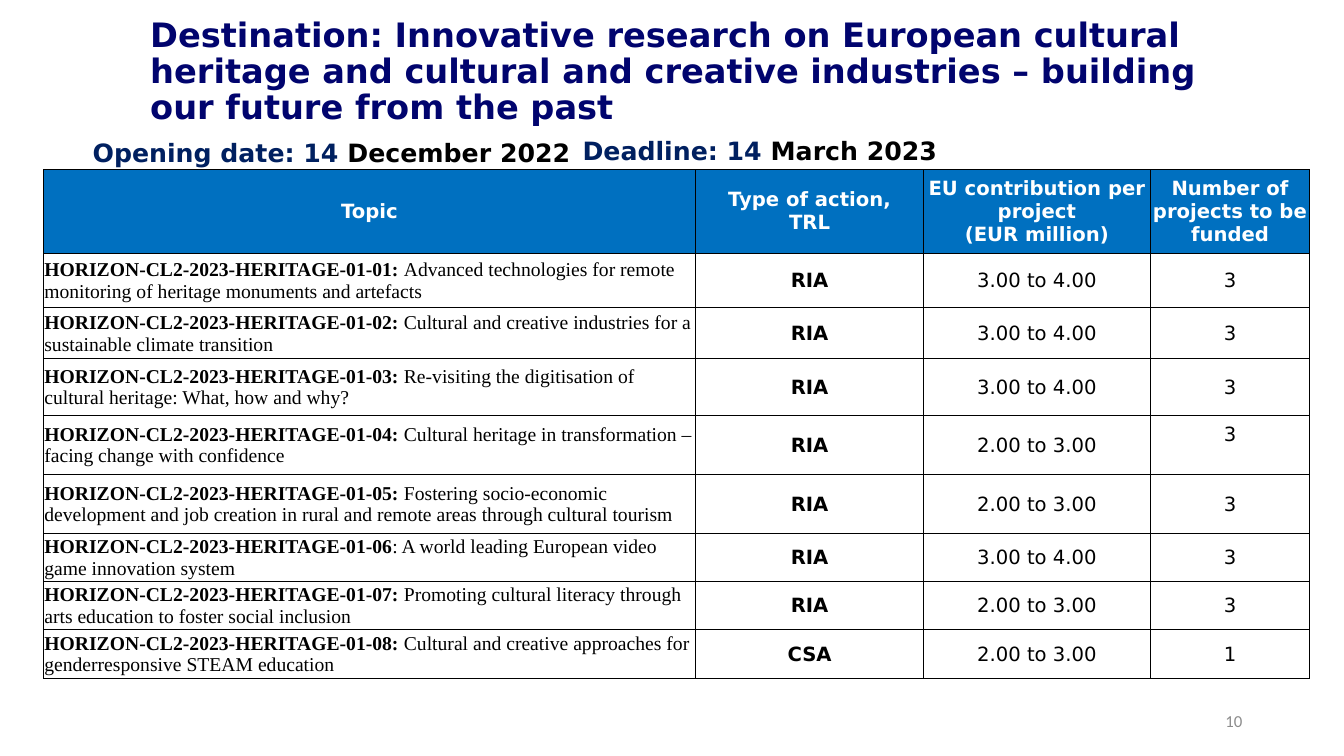
from dataclasses import dataclass

from lxml.etree import SubElement
from pptx import Presentation
from pptx.dml.color import RGBColor
from pptx.enum.text import MSO_ANCHOR, MSO_AUTO_SIZE, PP_ALIGN
from pptx.oxml.ns import qn
from pptx.util import Emu, Pt

EMU_PER_PX = 9144  # 100 px to the inch


@dataclass(frozen=True)
class Theme:
    sans: str = "DejaVu Sans"
    serif: str = "Times New Roman"
    number_font: str = "Calibri"
    title: str = "01046E"
    date: str = "002060"
    header: str = "0070C0"
    white: str = "FFFFFF"
    black: str = "000000"
    grey: str = "8C8C8C"
    title_size: int = 24
    date_size: int = 18
    table_size: int = 14
    number_size: int = 12
    border: float = 0.5


THEME = Theme()
COLUMN_WIDTHS = (647, 226, 225, 158)
ROW_HEIGHTS = (83, 54, 51, 56, 59, 58, 44, 48, 48)
HEADERS = (
    "Topic",
    "Type of action,\nTRL",
    "EU contribution per project\n(EUR million)",
    "Number of projects to be funded",
)
LOW, HIGH = "2.00 to 3.00", "3.00 to 4.00"
# Code, separator, topic, type of action, contribution, number of projects
TOPICS = (
    ("01", ": ", "Advanced technologies for remote\nmonitoring of heritage monuments and artefacts", "RIA", HIGH, "3"),
    ("02", ": ", "Cultural and creative industries for a sustainable climate transition", "RIA", HIGH, "3"),
    ("03", ": ", "Re-visiting the digitisation of cultural heritage: What, how and why?", "RIA", HIGH, "3"),
    ("04", ": ", "Cultural heritage in transformation – facing change with confidence", "RIA", LOW, "3"),
    ("05", ": ", "Fostering socio-economic development and job creation in rural and remote areas "
     "through cultural tourism", "RIA", LOW, "3"),
    ("06", "", ": A world leading European video game innovation system", "RIA", HIGH, "3"),
    ("07", ": ", "Promoting cultural literacy through arts education to foster social inclusion", "RIA", LOW, "3"),
    ("08", ": ", "Cultural and creative approaches for genderresponsive STEAM education", "CSA", LOW, "1"),
)
RAISED_COUNT_ROW = 4


def px(length):
    return Emu(length * EMU_PER_PX)


def style_font(font, name, size, color, bold=False):
    font.name = name
    font.size = Pt(size)
    font.bold = bold
    font.color.rgb = RGBColor.from_string(color)


def style_text(frame, name, size, color, bold=False, align=PP_ALIGN.LEFT):
    for para in frame.paragraphs:
        para.alignment = align
        for span in para.runs:
            style_font(span.font, name, size, color, bold)


def add_title(page, text, left, top, width, height):
    box = page.shapes.title
    box.left, box.top, box.width, box.height = map(px, (left, top, width, height))
    frame = box.text_frame
    frame.text = text
    frame.word_wrap = True
    frame.auto_size = MSO_AUTO_SIZE.NONE
    frame.vertical_anchor = MSO_ANCHOR.TOP
    frame.paragraphs[0].line_spacing = 0.9
    style_text(frame, THEME.sans, THEME.title_size, THEME.title, bold=True)


def add_text_box(page, text, left, top, width, height):
    box = page.shapes.add_textbox(*map(px, (left, top, width, height)))
    box.text_frame.word_wrap = True
    box.text_frame.text = text
    return box.text_frame


def add_date(page, label, date, left, top, width):
    frame = add_text_box(page, label, left, top, width, 40)
    frame.paragraphs[0].add_run().text = date
    style_text(frame, THEME.sans, THEME.date_size, THEME.date, bold=True)
    frame.paragraphs[0].runs[1].font.color.rgb = RGBColor.from_string(THEME.black)


def add_page_number(page, number):
    frame = add_text_box(page, number, 942, 695, 300, 40)
    frame.vertical_anchor = MSO_ANCHOR.MIDDLE
    style_text(frame, THEME.number_font, THEME.number_size, THEME.grey, align=PP_ALIGN.RIGHT)


def draw_borders(cell):
    properties = cell._tc.get_or_add_tcPr()
    for side in ("a:lnL", "a:lnR", "a:lnT", "a:lnB"):
        line = SubElement(properties, qn(side), w=str(Pt(THEME.border)))
        fill = SubElement(line, qn("a:solidFill"))
        SubElement(fill, qn("a:srgbClr"), val=THEME.black)


def prepare_cell(cell, fill):
    """Set borders, fill, insets and anchor; borders must precede the fill in the XML."""
    draw_borders(cell)
    cell.fill.solid()
    cell.fill.fore_color.rgb = RGBColor.from_string(fill)
    cell.margin_left = cell.margin_right = cell.margin_top = px(1)
    cell.margin_bottom = 0
    cell.vertical_anchor = MSO_ANCHOR.MIDDLE


def fill_cell(cell, text, fill=THEME.white, color=THEME.black, bold=False):
    prepare_cell(cell, fill)
    cell.text_frame.text = text
    style_text(cell.text_frame, THEME.sans, THEME.table_size, color, bold, PP_ALIGN.CENTER)


def fill_topic_cell(cell, code, separator, topic):
    prepare_cell(cell, THEME.white)
    first, *others = topic.split("\n")
    frame = cell.text_frame
    frame.text = f"HORIZON-CL2-2023-HERITAGE-01-{code}{separator}"
    frame.paragraphs[0].add_run().text = first
    for line in others:
        frame.add_paragraph().text = line
    style_text(frame, THEME.serif, THEME.table_size, THEME.black)
    frame.paragraphs[0].runs[0].font.bold = True


def add_topic_table(page, left, top):
    size = (sum(COLUMN_WIDTHS), sum(ROW_HEIGHTS))
    table = page.shapes.add_table(
        len(ROW_HEIGHTS), len(COLUMN_WIDTHS), *map(px, (left, top, *size))
    ).table
    for column, width in zip(table.columns, COLUMN_WIDTHS):
        column.width = px(width)
    for row, height in zip(table.rows, ROW_HEIGHTS):
        row.height = px(height)
    for index, header in enumerate(HEADERS):
        fill_cell(table.cell(0, index), header, THEME.header, THEME.white, bold=True)
    for index, (code, separator, topic, *details) in enumerate(TOPICS, 1):
        fill_topic_cell(table.cell(index, 0), code, separator, topic)
        for column, text in enumerate(details, 1):
            fill_cell(table.cell(index, column), text, bold=column == 1)
    table.cell(RAISED_COUNT_ROW, 3).margin_bottom = px(22)


def main():
    deck = Presentation()
    deck.slide_width, deck.slide_height = px(1333), px(750)
    page = deck.slides.add_slide(deck.slide_layouts.get_by_name("Title Only"))
    add_title(
        page,
        "Destination: Innovative research on European cultural heritage and cultural "
        "and creative industries – building our future from the past",
        139, 13, 1123, 47,
    )
    add_page_number(page, "10")
    add_topic_table(page, 43, 168)
    add_date(page, "Deadline: 14", " March 2023", 568, 129, 524)
    add_date(page, "Opening date: 14", " December 2022", 82, 131, 681)
    deck.save("out.pptx")


if __name__ == "__main__":
    main()
